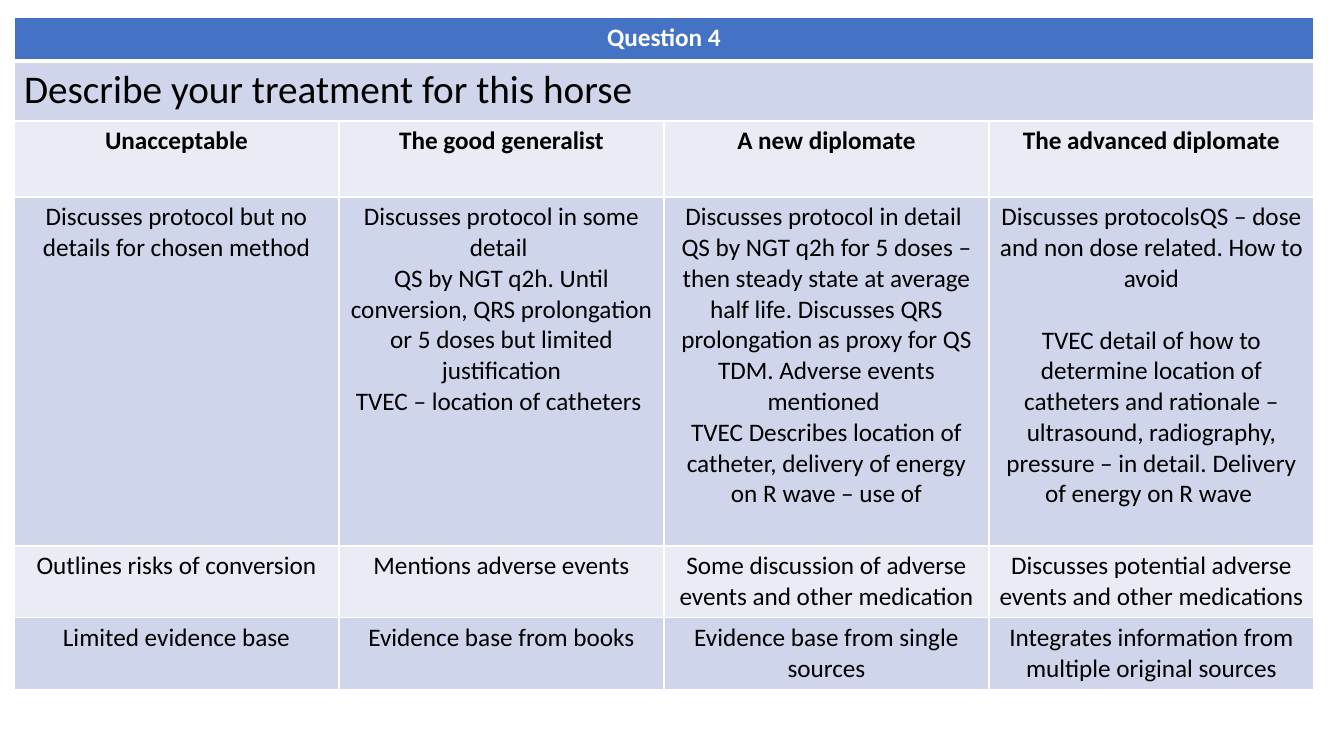
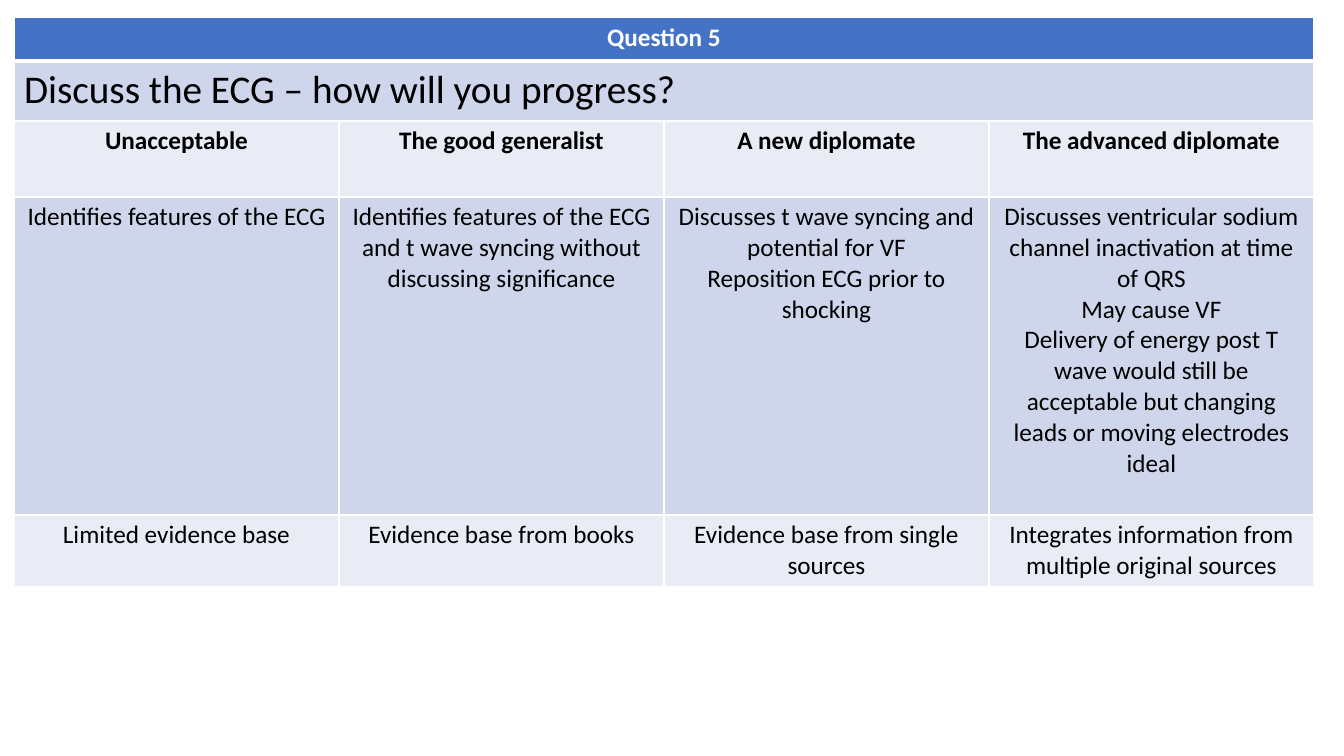
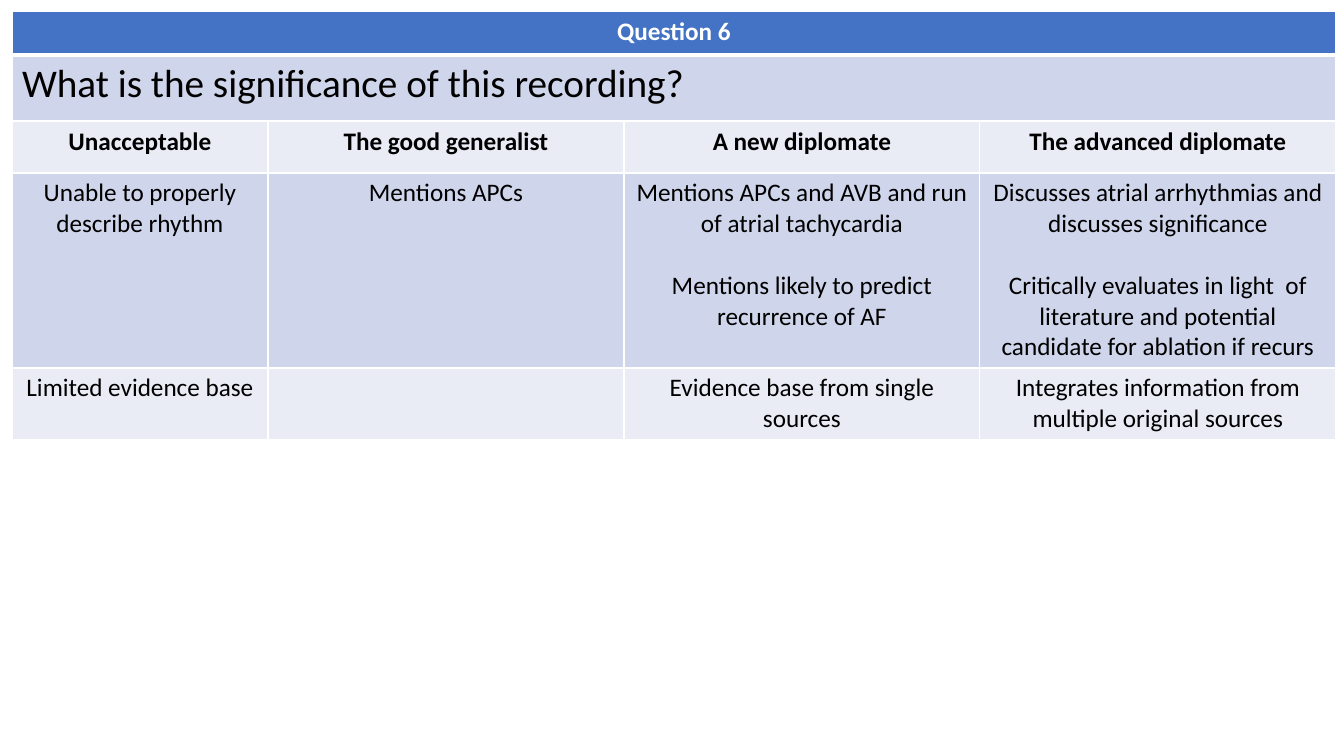
"""Build three marking-rubric slides, one table per exam question."""
from dataclasses import dataclass

from lxml import etree
from pptx import Presentation, util as u
from pptx.dml.color import RGBColor
from pptx.enum import text
from pptx.oxml import ns


@dataclass(frozen=True)
class Theme:
    font: str = "Calibri"
    body: int = 18
    prompt: int = 28
    line_gap: int = 22
    rule: int = 1
    header_rule: int = 3
    white: str = "FFFFFF"
    black: str = "000000"
    header: str = "4472C4"
    bands: tuple = ("E9EBF5", "CFD5EA")


T = Theme()
W, H = 1344, 756
PX = 12192000 / W


def px(n):
    return u.Emu(round(n * PX))


def write(cell, txt, *, fill, size=T.body, color=T.black, bold=False, align=text.PP_ALIGN.CENTER,
          top=T.rule, bottom=T.rule):
    tcPr = cell._tc.get_or_add_tcPr()
    for side, width in (("L", T.rule), ("R", T.rule), ("T", top), ("B", bottom)):
        ln = etree.SubElement(tcPr, ns.qn(f"a:ln{side}"), w=str(u.Pt(width)))
        solid = etree.SubElement(ln, ns.qn("a:solidFill"))
        etree.SubElement(solid, ns.qn("a:srgbClr"), val=T.white)
    cell.fill.solid()
    cell.fill.fore_color.rgb = RGBColor.from_string(fill)
    tf = cell.text_frame
    p = tf.paragraphs[0]
    for i, block in enumerate(txt.split("\n\n")):
        for j, line in enumerate(block.split("\n")):
            if i or j:
                p = tf.add_paragraph()
            p.alignment = align
            if i and not j:
                p.space_before = u.Pt(T.line_gap)
            p.font.size = u.Pt(size)
            if line:
                r = p.add_run()
                r.text = line
                r.font.name, r.font.size, r.font.bold = T.font, u.Pt(size), bold
                r.font.color.rgb = RGBColor.from_string(color)


LEVELS = ["Unacceptable", "The good generalist", "A new diplomate", "The advanced diplomate"]
EVIDENCE = ["Limited evidence base", "Evidence base from books", "Evidence base from single sources",
            "Integrates information from multiple original sources"]

QUESTIONS = [
    dict(title="Question 4", prompt="Describe your treatment for this horse",
         at=(14, 17), cols=[325] * 4, rows=[44, 60, 76, 349, 71, 72],
         criteria=[
             ["Discusses protocol but no details for chosen method",
              "Discusses protocol in some detail \n"
              "QS by NGT q2h. Until conversion, QRS prolongation or 5 doses but limited justification\n"
              "TVEC – location of catheters ",
              "Discusses protocol in detail \n"
              "QS by NGT q2h for 5 doses – then steady state at average half life. "
              "Discusses QRS prolongation as proxy for QS TDM. Adverse events mentioned \n"
              "TVEC Describes location of catheter, delivery of energy on R wave – use of",
              "Discusses protocolsQS – dose and non dose related. How to avoid\n\n"
              "TVEC detail of how to determine location of catheters and rationale – "
              "ultrasound, radiography, pressure – in detail. Delivery of energy on R wave "],
             ["Outlines risks of conversion", "Mentions adverse events",
              "Some discussion of adverse events and other medication",
              "Discusses potential adverse events and other medications"],
             EVIDENCE]),
    dict(title="Question 5", prompt="Discuss the ECG – how will you progress?",
         at=(14, 17), cols=[325] * 4, rows=[44, 60, 76, 318, 71],
         criteria=[
             ["Identifies features of the ECG",
              "Identifies features of the ECG and t wave syncing without discussing significance",
              "Discusses t wave syncing and potential for VF\nReposition ECG prior to shocking",
              "Discusses ventricular sodium channel inactivation at time of QRS\n"
              "May cause VF\n"
              "Delivery of energy post T wave would still be acceptable but changing leads "
              "or moving electrodes ideal"],
             EVIDENCE]),
    dict(title="Question 6", prompt="What is the significance of this recording?",
         at=(12, 11), cols=[256] + [356] * 3, rows=[44, 66, 52, 195, 71],
         criteria=[
             ["Unable to properly describe rhythm",
              "Mentions APCs",
              "Mentions APCs and AVB and run of atrial tachycardia\n\n"
              "Mentions likely to predict recurrence of AF",
              "Discusses atrial arrhythmias and discusses significance\n\n"
              "Critically evaluates in light  of literature and potential candidate "
              "for ablation if recurs"],
             [EVIDENCE[0], "", *EVIDENCE[2:]]]),
]

prs = Presentation()
prs.slide_width, prs.slide_height = px(W), px(H)

for q in QUESTIONS:
    s = prs.slides.add_slide(prs.slide_layouts[6])
    cols, rows = q["cols"], q["rows"]
    left, top = q["at"]
    tbl = s.shapes.add_table(len(rows), len(cols), px(left), px(top), px(sum(cols)), px(sum(rows))).table
    tbl.horz_banding = False
    for col, width in zip(tbl.columns, cols):
        col.width = px(width)
    for row, height in zip(tbl.rows, rows):
        row.height = px(height)

    for i in (0, 1):
        tbl.cell(i, 0).merge(tbl.cell(i, len(cols) - 1))
    for j in range(len(cols)):
        write(tbl.cell(0, j), "" if j else q["title"], fill=T.header, color=T.white, bold=True,
              bottom=T.header_rule)
        write(tbl.cell(1, j), "" if j else q["prompt"], fill=T.bands[1], size=T.prompt,
              align=text.PP_ALIGN.LEFT, top=T.header_rule)
    for i, line in enumerate([LEVELS, *q["criteria"]], start=2):
        for j, txt in enumerate(line):
            write(tbl.cell(i, j), txt, fill=T.bands[i % 2], bold=line is LEVELS)

prs.save("out.pptx")
